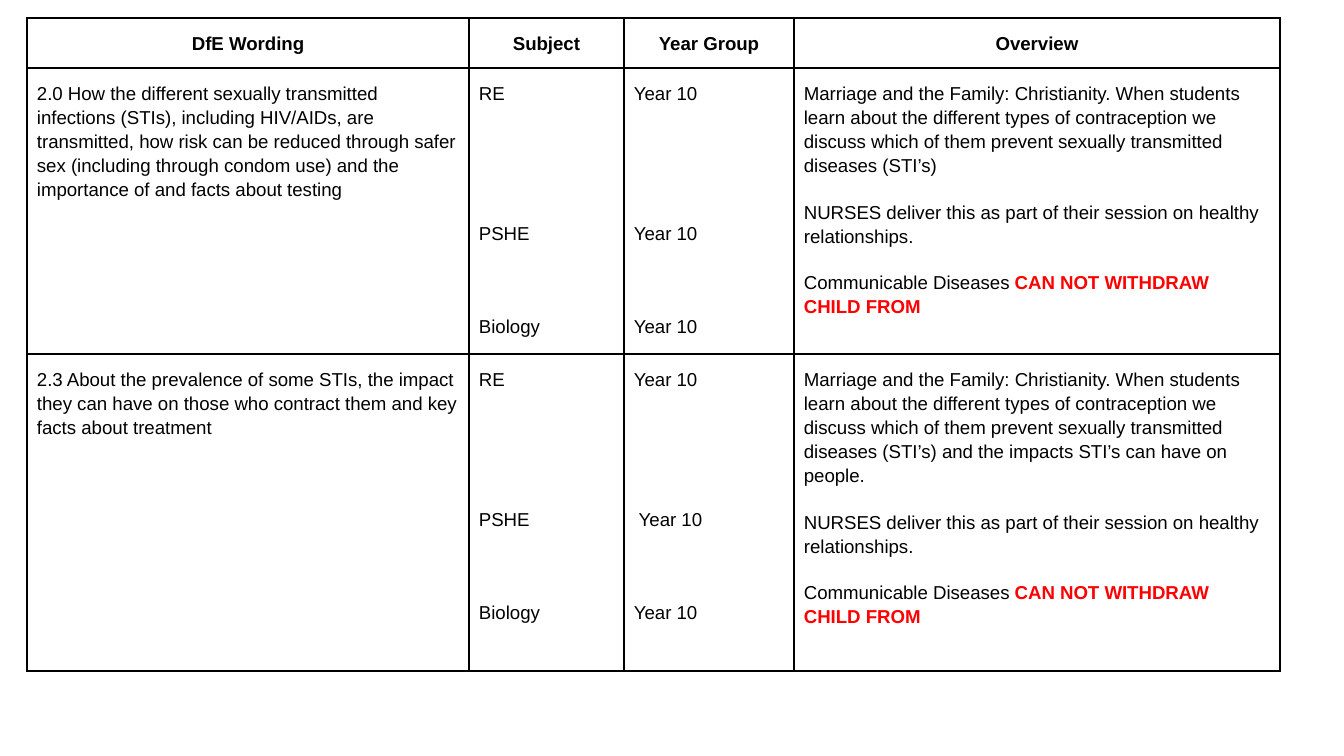
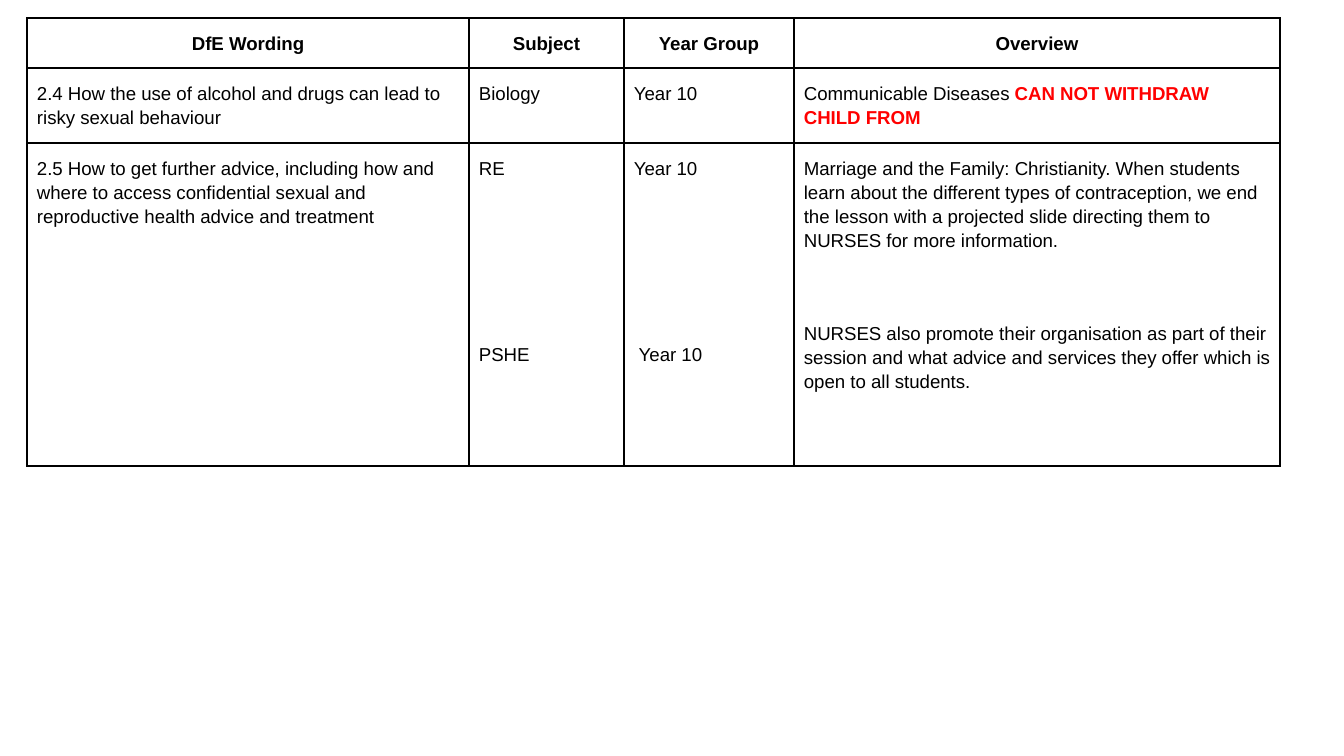
from dataclasses import dataclass

from lxml.etree import SubElement
from pptx import Presentation
from pptx.dml.color import RGBColor
from pptx.enum.shapes import MSO_SHAPE as Shape
from pptx.enum.text import PP_ALIGN as Align
from pptx.oxml.ns import qn
from pptx.util import Emu, Pt


@dataclass(frozen=True)
class Theme:
    font: str = "Arial"
    size: float = 10
    ink: str = "000000"
    alert: str = "FF0000"
    paper: str = "FFFFFF"
    line_spacing: float = 1.15
    paragraph_gap: float = 12
    skipped_row: float = 24.9  # one text line plus its paragraph gap
    rule: float = 1
    panel_rule: float = 0.75


@dataclass(frozen=True)
class Entry:
    text: str
    alert: str = ""
    skip: int = 0  # text rows left open above the entry


THEME = Theme()

# Content: each topic gives its wording, subjects, year groups and overview
HEADINGS = ["DfE Wording", "Subject", "Year Group", "Overview"]
DISEASES = Entry("Communicable Diseases ", alert="CAN NOT WITHDRAW CHILD FROM")
SESSION = Entry("NURSES deliver this as part of their session on healthy relationships.")
CONTRACEPTION = (
    "Marriage and the Family: Christianity. When students learn about the "
    "different types of contraception"
)
PREVENTION = (
    CONTRACEPTION + " we discuss which of them prevent sexually transmitted "
    "diseases (STI’s)"
)

PAGES = [
    [
        (286, [
            [Entry("2.0 How the different sexually transmitted infections (STIs), "
                   "including HIV/AIDs, are transmitted, how risk can be reduced "
                   "through safer sex (including through condom use) and the "
                   "importance of and facts about testing")],
            [Entry("RE"), Entry("PSHE", skip=2), Entry("Biology", skip=1)],
            [Entry("Year 10"), Entry("Year 10", skip=2), Entry("Year 10", skip=1)],
            [Entry(PREVENTION), SESSION, DISEASES],
        ]),
        (317, [
            [Entry("2.3 About the prevalence of some STIs, the impact they can have "
                   "on those who contract them and key facts about treatment")],
            [Entry("RE"), Entry("PSHE", skip=2), Entry("Biology", skip=1)],
            [Entry("Year 10"), Entry(" Year 10", skip=2), Entry("Year 10", skip=1)],
            [Entry(PREVENTION + " and the impacts STI’s can have on people."),
             SESSION, DISEASES],
        ]),
    ],
    [
        (75, [
            [Entry("2.4 How the use of alcohol and drugs can lead to risky sexual "
                   "behaviour")],
            [Entry("Biology")],
            [Entry("Year 10")],
            [DISEASES],
        ]),
        (323, [
            [Entry("2.5 How to get further advice, including how and where to access "
                   "confidential sexual and reproductive health advice and treatment")],
            [Entry("RE"), Entry("PSHE", skip=3)],
            [Entry("Year 10"), Entry(" Year 10", skip=3)],
            [Entry(CONTRACEPTION + ", we end the lesson with a projected slide "
                   "directing them to NURSES for more information."),
             Entry("NURSES also promote their organisation as part of their session "
                   "and what advice and services they offer which is open to all "
                   "students.", skip=1)],
        ]),
    ],
]

# Layout in px
SLIDE_W, SLIDE_H = 1344, 756
PANEL_W, PANEL_H = 1321, 737
TABLE_LEFT, TABLE_TOP = 27, 18
COLUMNS = [442, 155, 170, 486]
HEADER_H = 50
INSET_X, INSET_Y = 10, 13


def px(length):
    return Emu(round(length * 9144000 / SLIDE_W))


def add_text(paragraph, text, *, color=THEME.ink, bold=False, align=Align.LEFT, before=0):
    paragraph.alignment = align
    paragraph.line_spacing = THEME.line_spacing
    paragraph.space_before = Pt(before)
    run = paragraph.add_run()
    run.text = text
    run.font.name = THEME.font
    run.font.size = Pt(THEME.size)
    run.font.bold = bold
    run.font.color.rgb = RGBColor.from_string(color)


def rule_cell(cell):
    properties = cell._tc.get_or_add_tcPr()
    for side in ("a:lnL", "a:lnR", "a:lnT", "a:lnB"):
        border = SubElement(properties, qn(side), w=str(Pt(THEME.rule)))
        fill = SubElement(border, qn("a:solidFill"))
        SubElement(fill, qn("a:srgbClr"), val=THEME.ink)


def fill_cell(cell, entries, **style):
    cell.margin_left = cell.margin_right = px(INSET_X)
    cell.margin_top = cell.margin_bottom = px(INSET_Y)
    rule_cell(cell)
    cell.fill.background()
    frame = cell.text_frame
    for index, entry in enumerate(entries):
        paragraph = frame.add_paragraph() if index else frame.paragraphs[0]
        before = THEME.paragraph_gap + entry.skip * THEME.skipped_row if index else 0
        add_text(paragraph, entry.text, before=before, **style)
        if entry.alert:
            add_text(paragraph, entry.alert, color=THEME.alert, bold=True, before=before)


def add_panel(slide):
    panel = slide.shapes.add_shape(Shape.RECTANGLE, 0, 0, px(PANEL_W), px(PANEL_H))
    panel.shadow.inherit = False
    panel.fill.solid()
    panel.fill.fore_color.rgb = RGBColor.from_string(THEME.paper)
    panel.line.color.rgb = RGBColor.from_string(THEME.paper)
    panel.line.width = Pt(THEME.panel_rule)


def add_curriculum(slide, topics):
    heights = [HEADER_H] + [height for height, _ in topics]
    curriculum = slide.shapes.add_table(
        len(heights), len(COLUMNS), px(TABLE_LEFT), px(TABLE_TOP),
        px(sum(COLUMNS)), px(sum(heights)),
    ).table
    curriculum.first_row = curriculum.horz_banding = False
    for column, width in zip(curriculum.columns, COLUMNS):
        column.width = px(width)
    for row, height in zip(curriculum.rows, heights):
        row.height = px(height)

    # Header row, then one row per topic
    for column, heading in enumerate(HEADINGS):
        fill_cell(curriculum.cell(0, column), [Entry(heading)],
                  bold=True, align=Align.CENTER)
    for row, (_, cells) in enumerate(topics, start=1):
        for column, entries in enumerate(cells):
            fill_cell(curriculum.cell(row, column), entries)


def main():
    deck = Presentation()
    deck.slide_width, deck.slide_height = px(SLIDE_W), px(SLIDE_H)
    blank = deck.slide_layouts[6]
    for topics in PAGES:
        slide = deck.slides.add_slide(blank)
        add_panel(slide)
        add_curriculum(slide, topics)
    deck.save("out.pptx")


if __name__ == "__main__":
    main()
